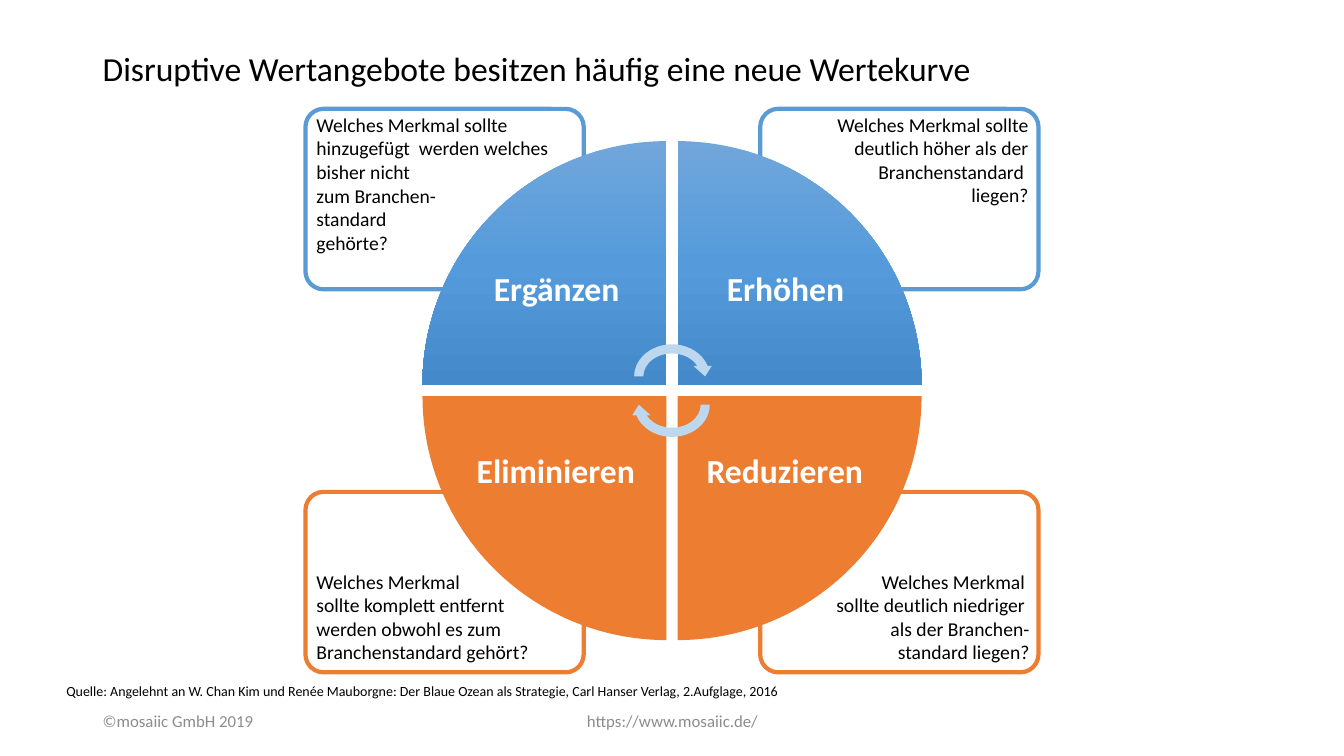
from copy import deepcopy
from lxml import etree
from pptx import Presentation
from pptx.dml.color import RGBColor
from pptx.enum.shapes import MSO_SHAPE
from pptx.enum.text import MSO_ANCHOR, MSO_AUTO_SIZE, PP_ALIGN
from pptx.oxml import parse_xml
from pptx.oxml.ns import qn
from pptx.util import Inches, Pt

# Content: row, column, wedge turn, label, label place, question, question place
QUADS = [
    (0, 0, 0, "Ergänzen", (4.8, 2.61, 1.46, 0.5),
     "Welches Merkmal sollte hinzugefügt  werden welches bisher nicht \n"
     "zum Branchen-\nstandard \ngehörte?", (3.04, 1.07, 2.66, 1.51)),
    (0, 1, 90, "Erhöhen", (7.11, 2.61, 1.38, 0.5),
     "Welches Merkmal sollte deutlich höher als der Branchenstandard \nliegen?",
     (7.64, 1.07, 2.66, 1.04)),
    (1, 1, 180, "Reduzieren", (6.91, 4.41, 1.77, 0.5),
     "Welches Merkmal \nsollte deutlich niedriger \nals der Branchen-\n"
     "standard liegen?", (7.53, 5.6, 2.78, 1.04)),
    (1, 0, 270, "Eliminieren", (4.63, 4.41, 1.79, 0.5),
     "Welches Merkmal \nsollte komplett entfernt  werden obwohl es zum "
     "Branchenstandard gehört?", (3.04, 5.6, 2.66, 1.04)),
]
LINES = [
    ("Disruptive Wertangebote besitzen häufig eine neue Wertekurve",
     (0.92, 0.4, 11.5, 0.6), "title", PP_ALIGN.LEFT),
    ("©mosaiic GmbH 2019", (0.92, 6.95, 3, 0.4), "foot", PP_ALIGN.LEFT),
    ("https://www.mosaiic.de/", (4.42, 6.95, 4.5, 0.4), "foot", PP_ALIGN.CENTER),
    ("Quelle: Angelehnt an W. Chan Kim und Renée Mauborgne: Der Blaue Ozean als "
     "Strategie, Carl Hanser Verlag, 2.Aufglage, 2016",
     (0.56, 6.72, 10.51, 0.27), "source", PP_ALIGN.LEFT),
]

# Theme
THEME = {
    "font": "Calibri",
    "white": "FFFFFF",
    "rows": ("5B9BD5", "ED7D31"),
    "shade": ((0, "71A6DB"), (50, "559BDB"), (100, "448ACA")),
    "arrow": "BDD7EE",
    "text": {  # size, colour, bold
        "title": (24, "000000", False),
        "foot": (12, "8C8C8C", False),
        "source": (10, "000000", False),
        "body": (14, "000000", False),
        "label": (24, "FFFFFF", True),
    },
}
MID = (6.665, 3.875)
BOX, BOX_GAP = (2.76, 1.79), (1.75, 2.01)
WEDGE, WEDGE_GAP = (2.42, 2.42), (0.11, 0.11)
ARROW, ARROW_STEP = (0.84, 0.73), 0.28

deck = Presentation()
deck.slide_width, deck.slide_height = Inches(13.33), Inches(7.5)
slide = deck.slides.add_slide(deck.slide_layouts[6])


def color(code):
    return RGBColor.from_string(code)


def apply(item, values):
    for name, value in values.items():
        setattr(item, name, value)


def place(size, gap, cell):
    """Mirror a part about the middle; cell is (column, row)."""
    spot = [m + (g / 2 if c else -g / 2 - s)
            for m, s, g, c in zip(MID, size, gap, cell)]
    return (*spot, *size)


def add_form(kind, spot, fill, turn=0):
    form = slide.shapes.add_shape(kind, *map(Inches, spot))
    form.shadow.inherit = False
    form.rotation = turn
    form.fill.solid()
    form.fill.fore_color.rgb = color(fill)
    form.line.fill.background()
    return form


def add_text(text, spot, style, align=PP_ALIGN.LEFT):
    frame = slide.shapes.add_textbox(*map(Inches, spot)).text_frame
    fixed = style in ("title", "foot")
    apply(frame, {
        "word_wrap": style != "label",
        "vertical_anchor": MSO_ANCHOR.MIDDLE if fixed else MSO_ANCHOR.TOP,
        "auto_size": MSO_AUTO_SIZE.NONE if fixed else MSO_AUTO_SIZE.SHAPE_TO_FIT_TEXT,
    })
    para = frame.paragraphs[0]
    apply(para, {"text": text, "alignment": align})
    if style == "title":
        para.line_spacing = 0.9
    size, tint, bold = THEME["text"][style]
    for run in para.runs:
        apply(run.font, {"name": THEME["font"], "size": Pt(size), "bold": bold})
        run.font.color.rgb = color(tint)
    # Line breaks take the type size of the text
    for gap in para._p.findall(qn("a:br")):
        gap.append(deepcopy(para.runs[0]._r.rPr))


def shade(form):
    """Swap the plain fill for a gradient that stays upright."""
    stops = "".join(
        f'<a:gs pos="{pos * 1000}"><a:srgbClr val="{code}"/></a:gs>'
        for pos, code in THEME["shade"])
    grad = parse_xml(
        '<a:gradFill xmlns:a="http://schemas.openxmlformats.org/drawingml/2006/main" '
        f'rotWithShape="0"><a:gsLst>{stops}</a:gsLst>'
        '<a:lin ang="5400000" scaled="0"/></a:gradFill>')
    plain = form._element.spPr.find(qn("a:solidFill"))
    plain.getparent().replace(plain, grad)


# Title, source and footer
for line in LINES:
    add_text(*line)

# Question frames
for row, col, *rest in reversed(QUADS):
    box = add_form(MSO_SHAPE.ROUNDED_RECTANGLE, place(BOX, BOX_GAP, (col, row)),
                   THEME["white"])
    box.adjustments[0] = 0.1
    box.line.color.rgb = color(THEME["rows"][row])
    box.line.width = Pt(3)
    tint = box._element.spPr.find(qn("a:solidFill"))[0]
    etree.SubElement(tint, qn("a:alpha"), val="90000")

# Circle of four wedges
for row, col, turn, *rest in QUADS:
    wedge = add_form(MSO_SHAPE.PIE_WEDGE, place(WEDGE, WEDGE_GAP, (col, row)),
                     THEME["rows"][row], turn)
    if row == 0:
        shade(wedge)

# Turning arrows
for side, turn in ((-1, 0), (1, 180)):
    left = MID[0] - ARROW[0] / 2
    top = MID[1] + side * ARROW_STEP / 2 - ARROW[1] / 2
    add_form(MSO_SHAPE.CIRCULAR_ARROW, (left, top, *ARROW), THEME["arrow"], turn)

# Questions and labels
for row, col, turn, label, spot, quest, area in QUADS:
    add_text(quest, area, "body", PP_ALIGN.RIGHT if col else PP_ALIGN.LEFT)
    add_text(label, spot, "label")

deck.save("out.pptx")
